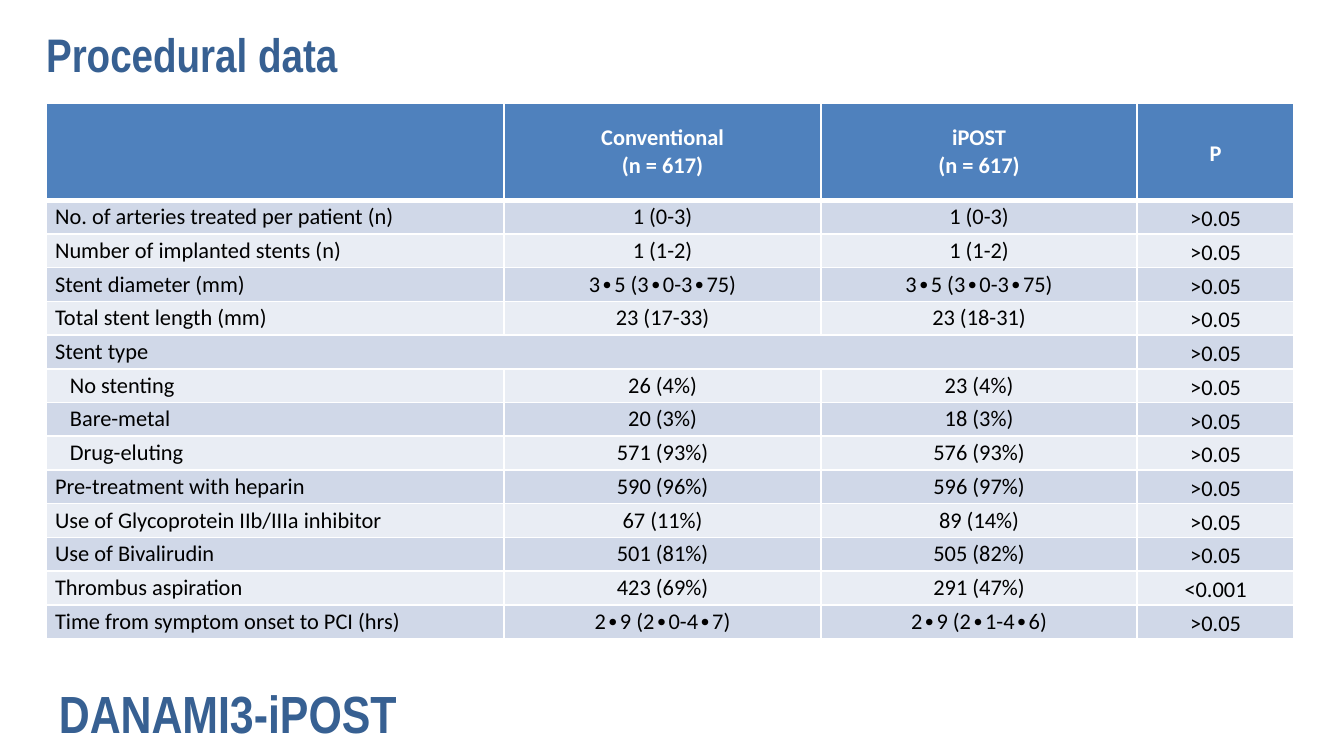
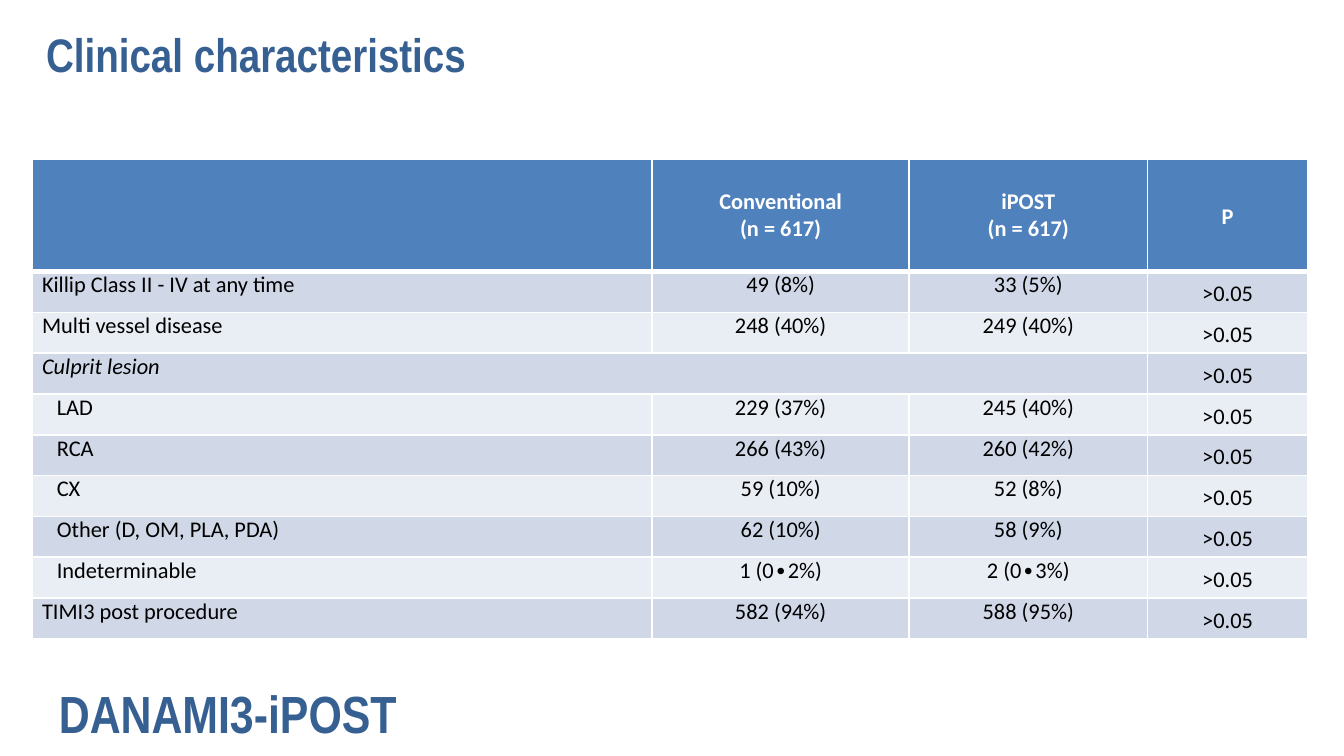
"""Build two trial result slides, each with a title, a table and a footer."""
from lxml.etree import SubElement as Sub
from pptx import Presentation
from pptx.dml.color import RGBColor as Rgb
from pptx.enum.text import MSO_ANCHOR as Anchor, MSO_AUTO_SIZE as Fit, PP_ALIGN as Align
from pptx.oxml.ns import qn
from pptx.util import Inches, Pt

HUES = {"title": "376092", "head": "4F81BD", "odd": "D0D8E8",
        "even": "E9EDF4", "white": "FFFFFF", "ink": "000000"}
HEAD = ("", "Conventional\n(n = 617)", "iPOST\n(n = 617)", "P")
HIGH = ">0.05"

PAGES = [
    {"title": "Procedural data", "left": 3.4, "top": 13.7, "head": 12.8, "row": 4.46,
     "cols": (34.1, 23.6, 23.5, 11.7), "anchor": Anchor.MIDDLE, "slant": "", "rows": [
         (0, "No. of arteries treated per patient (n)", "1 (0-3)", "1 (0-3)", HIGH),
         (0, "Number of implanted stents (n)", "1 (1-2)", "1 (1-2)", HIGH),
         (0, "Stent diameter (mm)", "3∙5 (3∙0-3∙75)", "3∙5 (3∙0-3∙75)", HIGH),
         (0, "Total stent length (mm)", "23 (17-33)", "23 (18-31)", HIGH),
         (0, "Stent type", "", "", HIGH),
         (1, "No stenting", "26 (4%)", "23 (4%)", HIGH),
         (1, "Bare-metal", "20 (3%)", "18 (3%)", HIGH),
         (1, "Drug-eluting", "571 (93%)", "576 (93%)", HIGH),
         (0, "Pre-treatment with heparin", "590 (96%)", "596 (97%)", HIGH),
         (0, "Use of Glycoprotein IIb/IIIa inhibitor", "67 (11%)", "89 (14%)", HIGH),
         (0, "Use of Bivalirudin", "501 (81%)", "505 (82%)", HIGH),
         (0, "Thrombus aspiration", "423 (69%)", "291 (47%)", "<0.001"),
         (0, "Time from symptom onset to PCI (hrs)", "2∙9 (2∙0-4∙7)", "2∙9 (2∙1-4∙6)", HIGH)]},
    {"title": "Clinical characteristics", "left": 2.43, "top": 21, "head": 14.95, "row": 5.4,
     "cols": (46.1, 19.12, 17.74, 11.92), "anchor": Anchor.TOP, "slant": "Culprit lesion", "rows": [
         (0, "Killip Class II - IV at any time", "49 (8%)", "33 (5%)", HIGH),
         (0, "Multi vessel disease", "248 (40%)", "249 (40%)", HIGH),
         (0, "Culprit lesion", "", "", HIGH),
         (1, "LAD", "229 (37%)", "245 (40%)", HIGH),
         (1, "RCA", "266 (43%)", "260 (42%)", HIGH),
         (1, "CX", "59 (10%)", "52 (8%)", HIGH),
         (1, "Other (D, OM, PLA, PDA)", "62 (10%)", "58 (9%)", HIGH),
         (1, "Indeterminable", "1 (0∙2%)", "2 (0∙3%)", HIGH),
         (0, "TIMI3 post procedure", "582 (94%)", "588 (95%)", HIGH)]},
]

deck = Presentation()
deck.slide_width = Inches(10)
deck.slide_height = deck.slide_width * 9 // 16
WIDE, HIGHT = deck.slide_width / 100, deck.slide_height / 100


def write(para, text, font, size, hue, bold):
    """Add text to a paragraph, with a line break at each newline."""
    for n, part in enumerate(text.split("\n")):
        if n:
            para.add_line_break()
        run = para.add_run()
        run.text = part
        run.font.name, run.font.size, run.font.bold = font, Pt(size), bold
        run.font.color.rgb = Rgb.from_string(HUES[hue])


def banner(shape, text, size, left, top, wide):
    """Place a heading box and write its text; sizes are percents of the slide."""
    shape.left, shape.top = int(left * WIDE), int(top * HIGHT)
    shape.width, shape.height = int(wide * WIDE), int(8.9 * HIGHT)
    frame = shape.text_frame
    frame.word_wrap, frame.auto_size = True, Fit.NONE
    frame.vertical_anchor = Anchor.MIDDLE
    frame.paragraphs[0].alignment = Align.LEFT
    write(frame.paragraphs[0], text, "Arial Narrow", size, "title", True)


for page in PAGES:
    slide = deck.slides.add_slide(deck.slide_layouts[5])
    banner(slide.shapes.title, page["title"], 25.2, 2.43, 2.67, 94.9)

    rows = [(0, *HEAD)] + page["rows"]
    tall = page["head"] + page["row"] * len(page["rows"])
    grid = slide.shapes.add_table(
        len(rows), len(HEAD), int(page["left"] * WIDE), int(page["top"] * HIGHT),
        int(sum(page["cols"]) * WIDE), int(tall * HIGHT)).table
    grid.horz_banding = False
    for col, wide in zip(grid.columns, page["cols"]):
        col.width = int(wide * WIDE)

    for r, (level, *texts) in enumerate(rows):
        grid.rows[r].height = int(page["row" if r else "head"] * HIGHT)
        band = ("even", "odd")[r % 2] if r else "head"
        for c, text in enumerate(texts):
            cell = grid.cell(r, c)
            cell.margin_left = Inches(0.18 if level and c == 0 else 0.07)
            cell.margin_right = Inches(0.07)
            cell.margin_top = cell.margin_bottom = 0
            cell.vertical_anchor = page["anchor"] if r and c < 3 else Anchor.MIDDLE
            for side in "LRTB":
                thick = 3 if (r, side) in ((0, "B"), (1, "T")) else 1
                line = Sub(cell._tc.get_or_add_tcPr(), qn("a:ln" + side), w=str(Pt(thick)))
                Sub(Sub(line, qn("a:solidFill")), qn("a:srgbClr"), val=HUES["white"])
            cell.fill.solid()
            cell.fill.fore_color.rgb = Rgb.from_string(HUES[band])
            para = cell.text_frame.paragraphs[0]
            para.alignment = Align.CENTER if c else Align.LEFT
            if c == 3:
                para.line_spacing = 1.15
            if text:
                write(para, text, "Calibri", 12, "ink" if r else "white", r == 0)
                if text == page["slant"]:
                    para.runs[0].font.italic = True
            else:
                para.font.size = Pt(12)
        if r and not texts[1]:
            grid.cell(r, 0).merge(grid.cell(r, 2))

    banner(slide.shapes.add_textbox(0, 0, 0, 0), "DANAMI3-iPOST", 28, 3.4, 89.86, 32.8)

deck.save("out.pptx")
